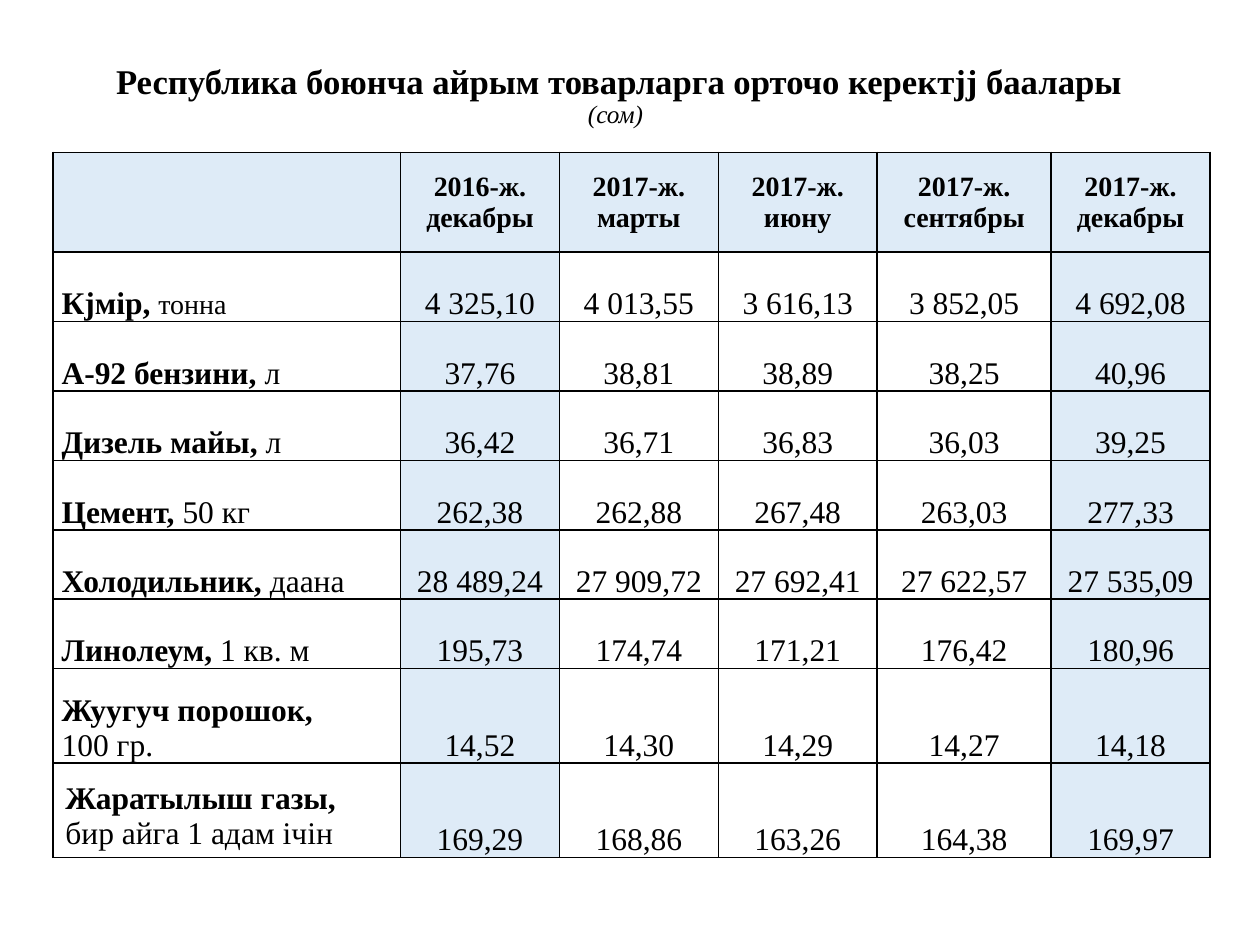
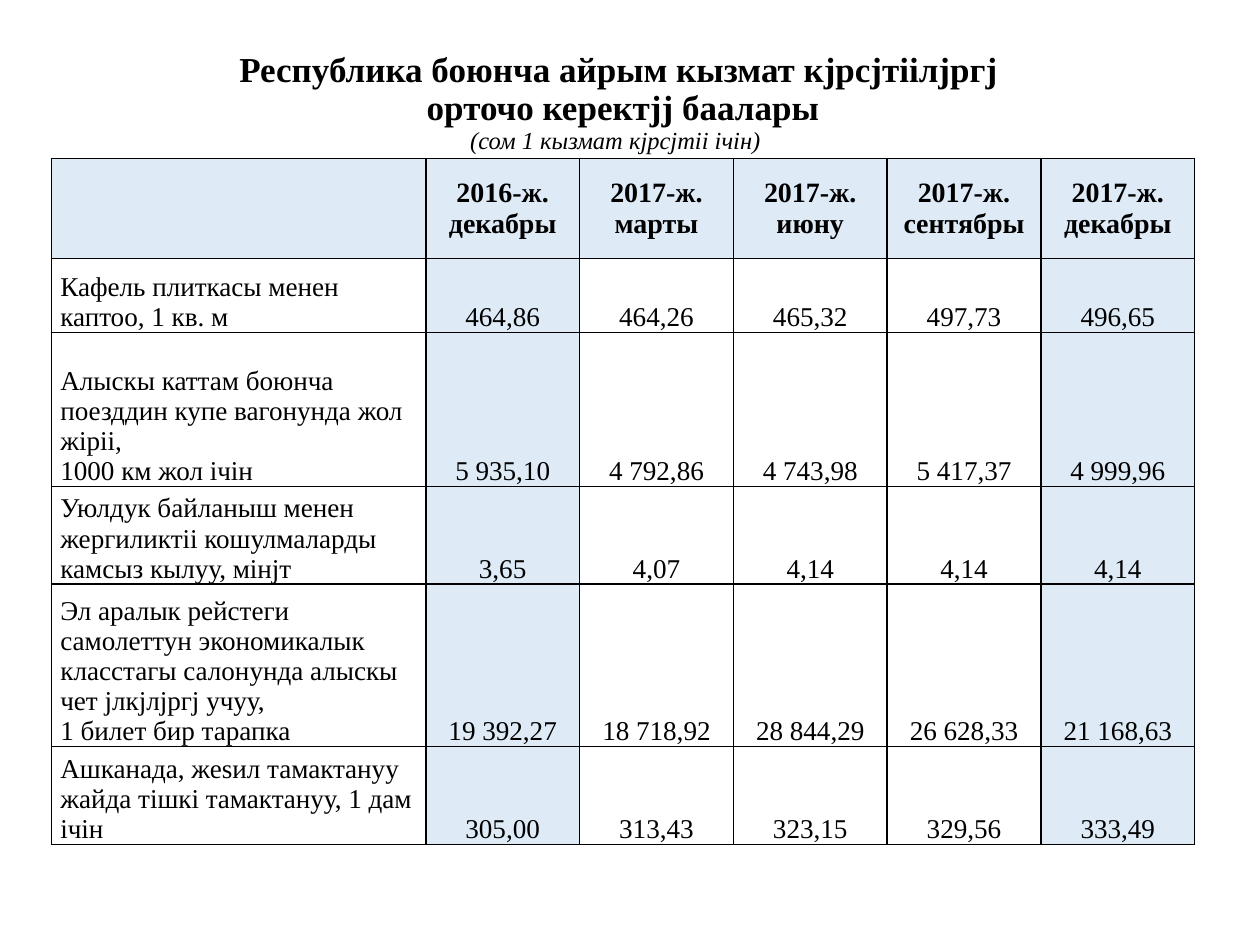
from dataclasses import dataclass

from lxml.etree import SubElement
from pptx import Presentation
from pptx.dml.color import RGBColor
from pptx.enum.text import MSO_ANCHOR as Anchor, PP_ALIGN as Align
from pptx.oxml.ns import qn
from pptx.util import Pt

# Shared look
FONT = "Times New Roman"
BLACK, PALE_BLUE = "000000", "DEEBF7"
SIDE_INSET = 5
MONTHS = ["2016-ж. декабры", "2017-ж. марты", "2017-ж. июну",
          "2017-ж. сентябры", "2017-ж. декабры"]
SHADED_COLUMNS = (1, 5)


@dataclass
class Span:
    text: str
    size: float
    bold: bool = False
    italic: bool = False


def color(hex_code):
    return RGBColor.from_string(hex_code)


# Text
def write_spans(para, spans):
    """Fill a paragraph; a newline in a span becomes a line break."""
    para.font.name = FONT
    para.font.color.rgb = color(BLACK)
    for span in spans:
        for number, line in enumerate(span.text.split("\n")):
            if number:
                para.add_line_break()
            if line:
                run = para.add_run()
                run.text = line
                font = run.font
                font.name, font.size = FONT, Pt(span.size)
                font.bold, font.italic = span.bold, span.italic
                font.color.rgb = color(BLACK)


def add_title(page, top, height, spans):
    box = page.shapes.add_textbox(Pt(29.5), Pt(top), Pt(648), Pt(height))
    frame = box.text_frame
    frame.word_wrap = True
    frame.vertical_anchor = Anchor.MIDDLE
    para = frame.paragraphs[0]
    para.alignment = Align.CENTER
    para.line_spacing = 0.9
    write_spans(para, spans)


# Table
def set_borders(cell):
    properties = cell._tc.get_or_add_tcPr()
    for position, side in enumerate(("lnL", "lnR", "lnT", "lnB")):
        line = SubElement(properties, qn(f"a:{side}"), w=str(Pt(1)))
        fill = SubElement(line, qn("a:solidFill"))
        SubElement(fill, qn("a:srgbClr"), val=BLACK)
        properties.insert(position, line)


def fill_cell(cell, paragraphs, anchor, align, insets, before=0, after=0):
    cell.vertical_anchor = anchor
    cell.margin_left = cell.margin_right = Pt(insets[0])
    cell.margin_top = cell.margin_bottom = Pt(insets[1])
    for number, spans in enumerate(paragraphs):
        frame = cell.text_frame
        para = frame.add_paragraph() if number else frame.paragraphs[0]
        para.alignment = align
        para.space_before = Pt(0 if number else before)
        para.space_after = Pt(after)
        write_spans(para, spans)


def add_price_table(page, left, top, widths, heights, rows, size):
    """Each row is (label paragraphs, prices, label insets)."""
    table = page.shapes.add_table(len(heights), len(widths), Pt(left), Pt(top),
                                  Pt(sum(widths)), Pt(sum(heights))).table
    table.first_row = table.horz_banding = False
    for column, width in zip(table.columns, widths):
        column.width = Pt(width)
    for row, height in zip(table.rows, heights):
        row.height = Pt(height)

    for r in range(len(heights)):
        for c in range(len(widths)):
            cell = table.cell(r, c)
            if r == 0 or c in SHADED_COLUMNS:
                cell.fill.solid()
                cell.fill.fore_color.rgb = color(PALE_BLUE)
            else:
                cell.fill.background()
            set_borders(cell)

    for c, month in enumerate(MONTHS, 1):
        fill_cell(table.cell(0, c), [[Span(month, 16, bold=True)]],
                  Anchor.MIDDLE, Align.CENTER, (SIDE_INSET, 0), 4, 4)
    for r, (label, prices, insets) in enumerate(rows, 1):
        fill_cell(table.cell(r, 0), label, Anchor.BOTTOM, Align.LEFT,
                  insets, before=4)
        for c, price in enumerate(prices, 1):
            fill_cell(table.cell(r, c), [[Span(price, size)]],
                      Anchor.BOTTOM, Align.CENTER, (0, 0))


# Content: goods as (name, unit, prices)
GOODS = [
    ("Кјмір, ", "тонна",
     ["4 325,10", "4 013,55", "3 616,13", "3 852,05", "4 692,08"]),
    ("А-92 бензини, ", "л", ["37,76", "38,81", "38,89", "38,25", "40,96"]),
    ("Дизель майы, ", "л", ["36,42", "36,71", "36,83", "36,03", "39,25"]),
    ("Цемент, ", "50 кг",
     ["262,38", "262,88", "267,48", "263,03", "277,33"]),
    ("Холодильник, ", "даана",
     ["28 489,24", "27 909,72", "27 692,41", "27 622,57", "27 535,09"]),
    ("Линолеум, ", "1 кв. м",
     ["195,73", "174,74", "171,21", "176,42", "180,96"]),
    ("Жуугуч порошок, \n", "100 гр.",
     ["14,52", "14,30", "14,29", "14,27", "14,18"]),
]
GAS_LABEL = [[Span("Жаратылыш газы,", 18, bold=True)],
             [Span("бир айга 1 адам ічін", 18)]]
GAS_PRICES = ["169,29", "168,86", "163,26", "164,38", "169,97"]

# Services as (label paragraphs, prices)
SERVICES = [
    (["Кафель плиткасы менен каптоо, 1 кв. м"],
     ["464,86", "464,26", "465,32", "497,73", "496,65"]),
    (["Алыскы каттам боюнча поезддин купе вагонунда жол жіріі,\n"
      "1000 км жол ічін"],
     ["5 935,10", "4 792,86", "4 743,98", "5 417,37", "4 999,96"]),
    (["Уюлдук байланыш менен жергиликтіі кошулмаларды\n"
      "камсыз кылуу, мінјт"],
     ["3,65", "4,07", "4,14", "4,14", "4,14"]),
    (["Эл аралык рейстеги самолеттун экономикалык класстагы "
      "салонунда алыскы чет јлкјлјргј учуу,", "1 билет бир тарапка"],
     ["19 392,27", "18 718,92", "28 844,29", "26 628,33", "21 168,63"]),
    (["Ашканада, жеѕил тамактануу жайда тішкі тамактануу, 1 дам ічін"],
     ["305,00", "313,43", "323,15", "329,56", "333,49"]),
]


def build_goods(page):
    add_title(page, 28.8, 52.6, [
        Span("Республика боюнча айрым товарларга орточо керектјј баалары\n",
             19.8, bold=True),
        Span("(сом) ", 14.4, italic=True)])
    rows = []
    for name, unit, prices in GOODS:
        unit_size = 16 if unit == "тонна" else 18
        label = [[Span(name, 18, bold=True), Span(unit, unit_size)]]
        rows.append((label, prices, (SIDE_INSET, 0)))
    rows.append((GAS_LABEL, GAS_PRICES, (7.2, 3.6)))
    add_price_table(page, 30.2, 87.1, [198.7, 90.8, 90.8, 90.8, 99.4, 90.8],
                    [56.9] + [39.7] * 6 + [54] * 2, rows, 18)


def build_services(page):
    add_title(page, 22.3, 73.4, [
        Span("Республика боюнча айрым кызмат кјрсјтіілјргј\n"
             " орточо керектјј баалары\n", 20, bold=True),
        Span("(сом 1 кызмат кјрсјтіі ічін) ", 14, italic=True)])
    rows = [([[Span(text, 15.5)] for text in label], prices, (SIDE_INSET, 0))
            for label, prices in SERVICES]
    add_price_table(page, 29.5, 90.7, [213.8] + [87.9] * 5,
                    [56.9, 42.5, 87.8, 51.5, 86.2, 51.5], rows, 15.5)


def main():
    deck = Presentation()
    deck.slide_width, deck.slide_height = Pt(720), Pt(540)
    for build in (build_goods, build_services):
        build(deck.slides.add_slide(deck.slide_layouts[6]))
    deck.save("out.pptx")


if __name__ == "__main__":
    main()
